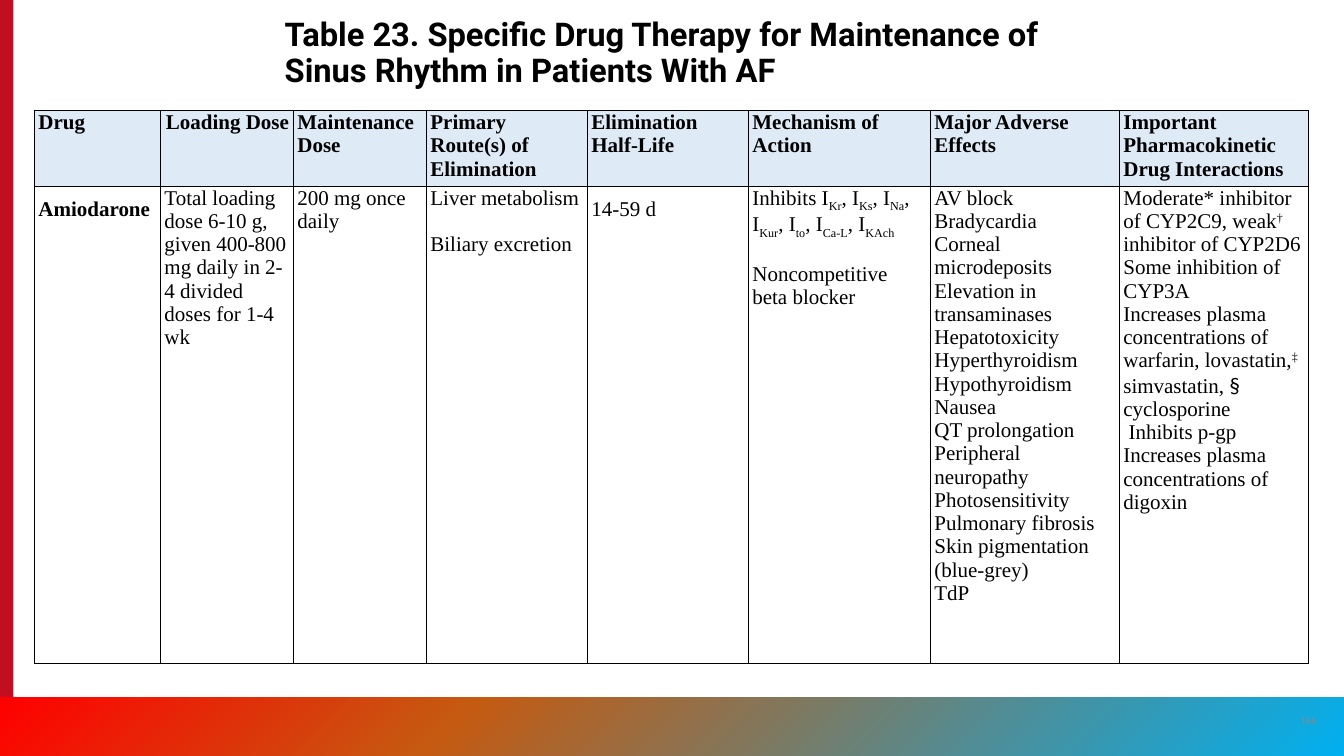
from dataclasses import dataclass
from lxml.etree import SubElement
from pptx import Presentation
from pptx.dml.color import RGBColor
from pptx.enum.shapes import MSO_SHAPE as Shape
from pptx.enum.text import MSO_ANCHOR as Anchor, PP_ALIGN as Align
from pptx.oxml.ns import qn
from pptx.util import Pt


@dataclass(frozen=True)
class Theme:
    black: str = "000000"
    red: str = "C10E21"
    header: str = "DEEAF6"
    gray: str = "8A8B8A"
    gradient: tuple = ((0, "00B0F0"), (66, "C55A11"), (100, "FF0000"))
    heading_font: str = "Roboto"
    table_font: str = "Times New Roman"
    symbol_font: str = "Lato"
    title_size: int = 28
    table_size: int = 18
    number_size: int = 8


THEME = Theme()
COLUMN_WIDTHS = (108, 114, 114, 138, 138, 156, 162, 162)
ROW_HEIGHTS = (60.8, 408.6)
SUB, SUPER = {"baseline": -25}, {"baseline": 30}

# Table wording: a cell is a list of paragraphs, a paragraph a text or a list of runs
HEADERS = ("Drug", "Loading Dose", "Maintenance Dose", "Primary Route(s) of Elimination",
           "Elimination Half-Life", "Mechanism of Action", "Major Adverse Effects",
           "Important Pharmacokinetic Drug Interactions")
CHANNELS = ("Kr", "Ks", "Na", "Kur", "to", "Ca-L", "KAch")
CURRENTS = [run for index, channel in enumerate(CHANNELS)
            for run in ((", I" if index else "Inhibits I", {}), (channel, SUB))]
AMIODARONE = (
    ["Amiodarone"],
    ["Total loading dose 6-10 g, given 400-800 mg daily in 2-4 divided doses for 1-4 wk"],
    ["200 mg once daily"],
    ["Liver metabolism", "Biliary excretion"],
    ["14-59 d"],
    [CURRENTS, "Noncompetitive beta blocker"],
    ["AV block", "Bradycardia", "Corneal microdeposits", "Elevation in transaminases",
     "Hepatotoxicity", "Hyperthyroidism", "Hypothyroidism", "Nausea", "QT prolongation",
     "Peripheral neuropathy", "Photosensitivity", "Pulmonary fibrosis",
     "Skin pigmentation (blue-grey)", "TdP"],
    [[("Moderate* inhibitor of CYP2C9, weak", {}), ("†", SUPER), (" inhibitor of CYP2D6", {})],
     "Some inhibition of CYP3A",
     [("Increases plasma concentrations of warfarin, lovastatin,", {}), ("‡", SUPER),
      (" simvastatin,", {}), (" §", {"font": THEME.symbol_font}), (" cyclosporine", {})],
     "Inhibits p-gp",
     "Increases plasma concentrations of digoxin"],
)
TALL_COLUMNS = (0, 4)
INDENTED = "Inhibits p-gp"


def apply(target, formats):
    for name, value in formats.items():
        setattr(target, name, value)


def add_run(paragraph, text, font, size, color, bold=False, baseline=0):
    run = paragraph.add_run()
    run.text = text
    apply(run.font, {"name": font, "size": Pt(size), "bold": bold})
    run.font.color.rgb = RGBColor.from_string(color)
    if baseline:
        run._r.get_or_add_rPr().set("baseline", str(baseline * 1000))


def add_bar(slide, box, color):
    bar = slide.shapes.add_shape(Shape.RECTANGLE, *map(Pt, box))
    bar.shadow.inherit = False
    bar.line.fill.background()
    bar.fill.solid()
    bar.fill.fore_color.rgb = RGBColor.from_string(color)
    return bar


def add_footer(slide, box):
    left, top, width, height = box
    bar = add_bar(slide, box, THEME.red)
    bar.rotation = 180
    bar.fill.gradient()
    bar.fill.gradient_angle = 315
    stops = bar._element.spPr.find(qn("a:gradFill")).find(qn("a:gsLst"))
    for stop in list(stops):
        stops.remove(stop)
    for position, color in THEME.gradient:
        stop = SubElement(stops, qn("a:gs"), pos=str(position * 1000))
        SubElement(stop, qn("a:srgbClr"), val=color)

    # Page number at the right end
    number_box = (left + width - 47.5, top + 2.9, 34.6, 34.6)
    add_text(slide, number_box, "166", Anchor.MIDDLE, {"alignment": Align.CENTER},
             THEME.heading_font, THEME.number_size, THEME.gray)


def add_text(slide, box, text, anchor, paragraph_format, *run_format):
    frame = slide.shapes.add_textbox(*map(Pt, box)).text_frame
    apply(frame, {"word_wrap": True, "vertical_anchor": anchor})
    paragraph = frame.paragraphs[0]
    apply(paragraph, paragraph_format)
    add_run(paragraph, text, *run_format)


def add_borders(cell):
    properties = cell._tc.get_or_add_tcPr()
    for index, side in enumerate(("lnL", "lnR", "lnT", "lnB")):
        line = properties.makeelement(qn(f"a:{side}"), {"w": str(Pt(1))})
        fill = SubElement(line, qn("a:solidFill"))
        SubElement(fill, qn("a:srgbClr"), val=THEME.black)
        properties.insert(index, line)


def fill_cell(cell, paragraphs, bold=False, align=Align.LEFT, spacing=1.0, gap=0):
    apply(cell, {"margin_left": Pt(3), "margin_right": Pt(3),
                 "margin_top": 0, "margin_bottom": 0})
    for index, content in enumerate(paragraphs):
        frame = cell.text_frame
        paragraph = frame.add_paragraph() if index else frame.paragraphs[0]
        apply(paragraph, {"alignment": align, "line_spacing": spacing,
                          "space_before": Pt(gap if index else 0), "space_after": Pt(0)})
        if content == INDENTED:
            paragraph._p.get_or_add_pPr().set("marL", str(Pt(4.5)))
        runs = [(content, {})] if isinstance(content, str) else content
        for text, style in runs:
            add_run(paragraph, text, style.get("font", THEME.table_font), THEME.table_size,
                    THEME.black, bold, style.get("baseline", 0))
    add_borders(cell)


def add_drug_table(slide, left, top):
    size = (sum(COLUMN_WIDTHS), sum(ROW_HEIGHTS))
    table = slide.shapes.add_table(2, len(HEADERS), *map(Pt, (left, top, *size))).table
    apply(table, {"first_row": False, "horz_banding": False})
    for row, height in zip(table.rows, ROW_HEIGHTS):
        row.height = Pt(height)
    for index, width in enumerate(COLUMN_WIDTHS):
        table.columns[index].width = Pt(width)

        # Header cell
        header = table.cell(0, index)
        header.fill.solid()
        header.fill.fore_color.rgb = RGBColor.from_string(THEME.header)
        centred = HEADERS[index] == "Loading Dose"
        fill_cell(header, [HEADERS[index]], True, Align.CENTER if centred else Align.LEFT)

        # Drug cell
        body = table.cell(1, index)
        body.fill.background()
        fill_cell(body, AMIODARONE[index], bold=index == 0,
                  spacing=1.5 if index in TALL_COLUMNS else 1.0,
                  gap=20 if index in (3, 5) else 0)


def main():
    presentation = Presentation()
    apply(presentation, {"slide_width": Pt(1152), "slide_height": Pt(648)})
    slide = presentation.slides.add_slide(presentation.slide_layouts[6])
    add_bar(slide, (0, 0, 11.5, 648), THEME.red)
    add_footer(slide, (0, 597.6, 1152, 50.4))
    add_text(slide, (237, 20, 678, 60),
             "Table 23. Specific Drug Therapy for Maintenance of Sinus Rhythm in Patients With AF",
             Anchor.BOTTOM, {"line_spacing": 0.9}, THEME.heading_font, THEME.title_size,
             THEME.black, True)
    add_drug_table(slide, 30, 95)
    presentation.save("out.pptx")


if __name__ == "__main__":
    main()
